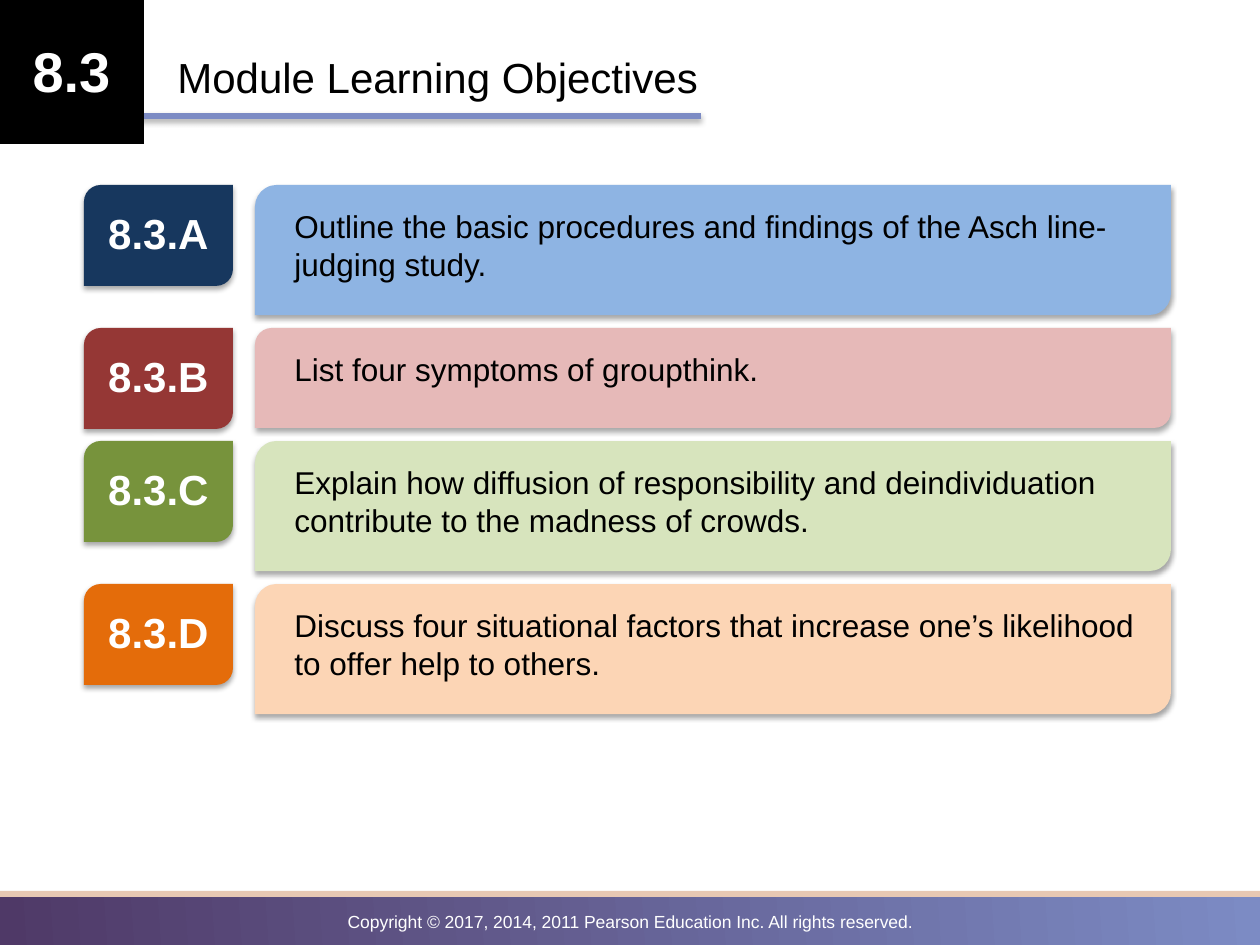
import pptx
import pptx.util
from lxml import etree
from pptx.dml.color import RGBColor
from pptx.enum.shapes import MSO_SHAPE
from pptx.enum.text import MSO_AUTO_SIZE, PP_ALIGN
from pptx.oxml.ns import qn

PX = 914400 / 126
BLACK = RGBColor(0x00, 0x00, 0x00)
WHITE = RGBColor(0xFF, 0xFF, 0xFF)
PURPLE = RGBColor(0x4F, 0x39, 0x67)
PERIWINKLE = RGBColor(0x7C, 0x8B, 0xC4)
SAND = RGBColor(0xE7, 0xC8, 0xB3)

deck = pptx.Presentation()
deck.slide_width = pptx.util.Inches(10)
deck.slide_height = pptx.util.Inches(7.5)
slide = deck.slides.add_slide(deck.slide_layouts[6])


def add_block(kind, left, top, width, height, color, shadow=False):
    """Add a filled shape without outline, optionally with a soft drop shadow."""
    block = slide.shapes.add_shape(kind, *(round(v * PX) for v in (left, top, width, height)))
    block.shadow.inherit = False
    block.fill.solid()
    block.fill.fore_color.rgb = color
    block.line.fill.background()
    if shadow:
        effects = block._element.spPr.find(qn("a:effectLst"))
        outer = etree.SubElement(
            effects, qn("a:outerShdw"), blurRad=str(pptx.util.Pt(3.1)),
            dist=str(pptx.util.Pt(1.8)), dir="5400000", rotWithShape="0")
        tone = etree.SubElement(outer, qn("a:srgbClr"), val=str(BLACK))
        etree.SubElement(tone, qn("a:alpha"), val="35000")
    return block


def add_text(text, left, top, width, height, size, color, bold=False, align=PP_ALIGN.LEFT):
    box = slide.shapes.add_textbox(*(round(v * PX) for v in (left, top, width, height)))
    frame = box.text_frame
    frame.word_wrap = True
    frame.auto_size = MSO_AUTO_SIZE.SHAPE_TO_FIT_TEXT
    paragraph = frame.paragraphs[0]
    paragraph.text = text
    paragraph.alignment = align
    paragraph.font.name = "Arial"
    paragraph.font.size = pptx.util.Pt(size)
    paragraph.font.bold = bold
    paragraph.font.color.rgb = color


# Footer
footer = add_block(MSO_SHAPE.RECTANGLE, 0, 892, 1260, 57, PURPLE)
footer.fill.gradient()
footer.fill.gradient_angle = 4
for stop, color in zip(footer.fill.gradient_stops, (PURPLE, PERIWINKLE)):
    stop.color.rgb = color
add_block(MSO_SHAPE.RECTANGLE, 0, 891, 1266, 6, SAND)
add_text("Copyright © 2017, 2014, 2011 Pearson Education Inc. All rights reserved.",
         0, 905, 1260, 34, 10, WHITE, align=PP_ALIGN.CENTER)

# Heading
add_block(MSO_SHAPE.RECTANGLE, -25, 113, 726, 6, PERIWINKLE, shadow=True)
add_block(MSO_SHAPE.RECTANGLE, -1, -1, 145, 145, BLACK)
add_text("8.3", -1, 30, 145, 81, 32, WHITE, bold=True, align=PP_ALIGN.CENTER)
add_text("Module Learning Objectives", 165, 45, 971, 63, 24, BLACK)

# Objectives: number, number colour, panel colour, lines of text, text
objectives = [
    ("8.3.A", RGBColor(0x17, 0x37, 0x5E), RGBColor(0x8E, 0xB4, 0xE3), 2,
     "Outline the basic procedures and findings of the Asch line-judging study."),
    ("8.3.B", RGBColor(0x95, 0x37, 0x35), RGBColor(0xE6, 0xB9, 0xB8), 1,
     "List four symptoms of groupthink."),
    ("8.3.C", RGBColor(0x77, 0x93, 0x3C), RGBColor(0xD7, 0xE4, 0xBD), 2,
     "Explain how diffusion of responsibility and deindividuation contribute "
     "to the madness of crowds."),
    ("8.3.D", RGBColor(0xE4, 0x6C, 0x0A), RGBColor(0xFC, 0xD5, 0xB5), 2,
     "Discuss four situational factors that increase one’s likelihood "
     "to offer help to others."),
]
ROW_GAP = 13
TEXT_DROP = 16
top = 185
for number, number_color, panel_color, lines, objective in objectives:
    panel_height = 70 + 30 * lines
    add_block(MSO_SHAPE.ROUND_2_DIAG_RECTANGLE, 84, top, 149, 101, number_color, shadow=True)
    add_text(number, 84, top + TEXT_DROP, 149, 63, 24, WHITE, bold=True, align=PP_ALIGN.CENTER)
    add_block(MSO_SHAPE.ROUND_2_DIAG_RECTANGLE, 255, top, 916, panel_height, panel_color,
              shadow=True)
    add_text(objective, 282, top + TEXT_DROP, 881, 12 + 38 * lines, 18, BLACK)
    top += panel_height + ROW_GAP

deck.save("out.pptx")
